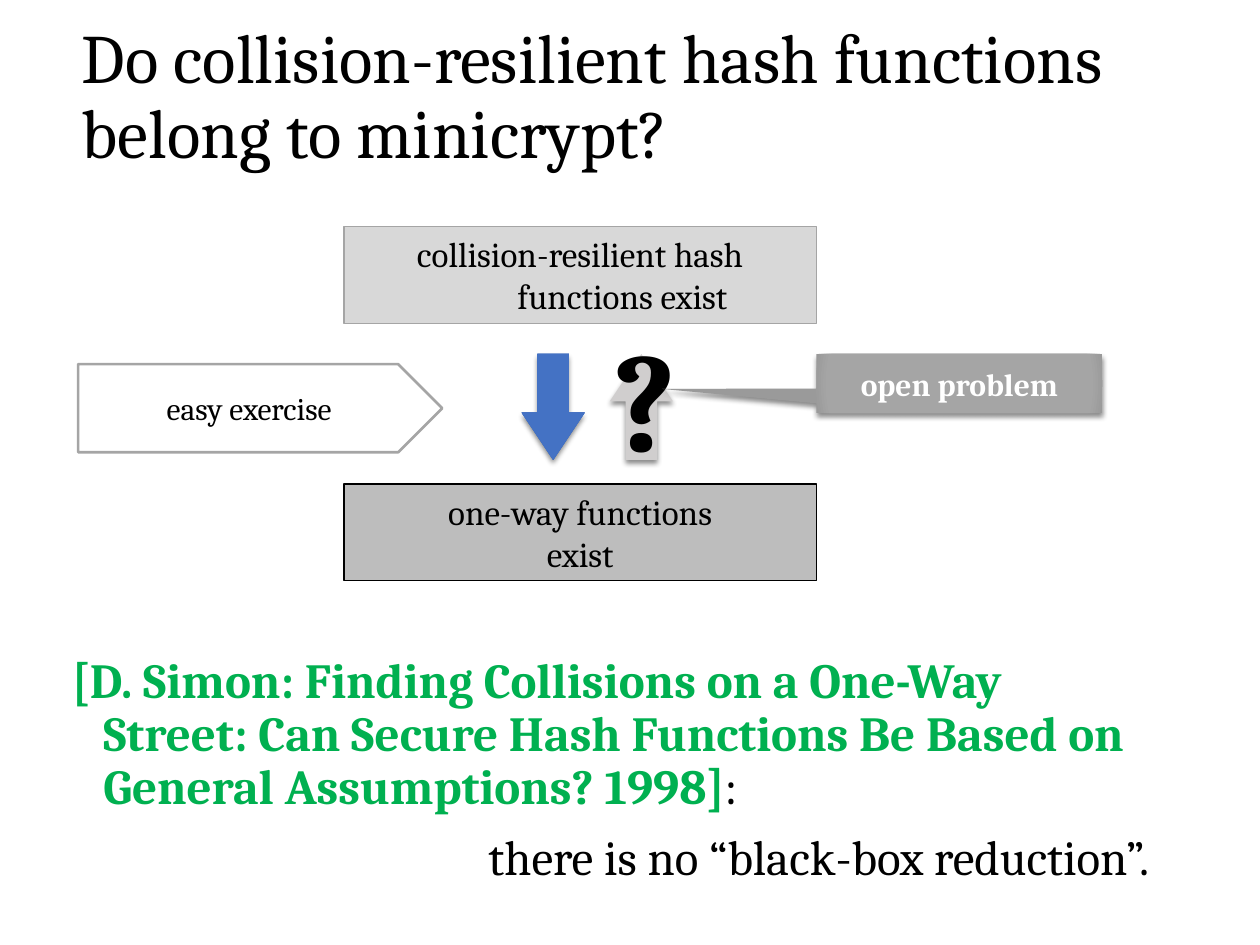
from lxml import etree
from pptx import Presentation
from pptx import util as u
from pptx.dml.color import RGBColor
from pptx.enum import shapes, text
from pptx.oxml import parse_xml
from pptx.oxml.ns import nsdecls, qn

COLORS = {
    "ink": "000000", "paper": "FFFFFF", "citation": "00B050",
    "light": "D8D8D8", "medium": "BDBDBD", "outline": "A5A5A5",
    "proved": "4472C4", "proved_edge": "3F6AB7",
    "unknown": "D0CECE", "open_edge": "9A9A9A",
}
TITLE = "Do collision-resilient hash functions belong to minicrypt?"
CITATION = ("[D. Simon: Finding Collisions on a One-Way Street: "
            "Can Secure Hash Functions Be Based on General Assumptions? 1998]")
CONCLUSION = "there is no “black-box reduction”."

# Statements, top to bottom: lines, fill, outline
STATEMENTS = [
    (["collision-resilient hash functions exist"], "light", "outline"),
    (["one-way functions", "exist"], "medium", "ink"),
]
# Implications, left to right: rotation, fill, edge of the gradient
IMPLICATIONS = [(90, "proved", "proved_edge"), (270, "unknown", None)]

STATEMENT_LEFT, STATEMENT_TOP, STATEMENT_STEP = 2.73, 1.8, 2.04
STATEMENT_SIZE = (3.75, 0.77)
ARROW_LEFT, ARROW_TOP, ARROW_STEP = 3.97, 2.98, 0.7
ARROW_SIZE = (0.84, 0.5)

KINDS = shapes.MSO_SHAPE
ALIGN = text.PP_ALIGN
ANCHOR = text.MSO_ANCHOR


def rgb(name):
    return RGBColor.from_string(COLORS[name])


def place(item, left, top, width, height):
    item.left, item.top = u.Inches(left), u.Inches(top)
    item.width, item.height = u.Inches(width), u.Inches(height)


def write(frame, paragraphs, size, align=ALIGN.LEFT, anchor=ANCHOR.TOP,
          color="ink", bold=False, hanging=0, line=None, before=None):
    """Fill a frame; a paragraph is a string or a list of (text, color, bold)."""
    frame.word_wrap = True
    frame.auto_size = text.MSO_AUTO_SIZE.NONE
    frame.vertical_anchor = anchor
    for index, content in enumerate(paragraphs):
        para = frame.add_paragraph() if index else frame.paragraphs[0]
        para.alignment = align
        para.line_spacing = line
        if before is not None:
            para.space_before = u.Pt(before)
        properties = para._p.get_or_add_pPr()
        properties.set("marL", str(u.Inches(hanging)))
        properties.set("indent", str(-u.Inches(hanging)))
        etree.SubElement(properties, qn("a:buNone"))
        spans = [(content, color, bold)] if isinstance(content, str) else content
        for words, span_color, span_bold in spans:
            span = para.add_run()
            span.text = words
            span.font.name = "Cambria"
            span.font.size = u.Pt(size)
            span.font.bold = span_bold
            span.font.color.rgb = rgb(span_color)


def shade(shape, center, edge):
    """Give the shape a radial gradient that darkens at its edge."""
    stops = "".join(
        f'<a:gs pos="{share * 1000}"><a:srgbClr val="{COLORS[name]}"/></a:gs>'
        for share, name in [(0, center), (90, center), (100, edge)])
    gradient = parse_xml(
        f'<a:gradFill {nsdecls("a")}><a:gsLst>{stops}</a:gsLst><a:path path="circle">'
        '<a:fillToRect l="100000" t="100000" r="100000" b="100000"/></a:path></a:gradFill>')
    shape._element.spPr.find(qn("a:prstGeom")).addnext(gradient)


def cast_shadow(shape):
    effects = shape._element.spPr.find(qn("a:effectLst"))
    effects.append(parse_xml(
        f'<a:outerShdw {nsdecls("a")} blurRad="{u.Pt(3)}" dist="{u.Pt(2)}" '
        'dir="5400000" rotWithShape="0"><a:srgbClr val="000000">'
        '<a:alpha val="45000"/></a:srgbClr></a:outerShdw>'))


def add_figure(page, kind, frame, fill, edge=None, outline=None, weight=0.79,
               raised=False):
    shape = page.shapes.add_shape(kind, *map(u.Inches, frame))
    shape.shadow.inherit = False
    if edge:
        shade(shape, fill, edge)
    else:
        shape.fill.solid()
        shape.fill.fore_color.rgb = rgb(fill)
    if outline:
        shape.line.color.rgb = rgb(outline)
        shape.line.width = u.Pt(weight)
    else:
        shape.line.fill.background()
    if raised:
        cast_shadow(shape)
    return shape


def main():
    deck = Presentation()
    deck.slide_width, deck.slide_height = u.Inches(10), u.Inches(7.5)
    page = deck.slides.add_slide(deck.slide_layouts[1])

    title, body = page.placeholders
    place(title, 0.55, 0.16, 9.22, 1.25)
    write(title.text_frame, [TITLE], 39.6, anchor=ANCHOR.MIDDLE, line=0.9, before=0)
    place(body, 0.47, 5.16, 8.75, 2.19)
    write(body.text_frame,
          [[(CITATION, "citation", True), (":", "ink", False)], CONCLUSION],
          28, hanging=0.25, line=0.9, before=10)
    body.text_frame.paragraphs[-1].alignment = ALIGN.RIGHT

    for row, (lines, fill, outline) in enumerate(STATEMENTS):
        top = STATEMENT_TOP + row * STATEMENT_STEP
        box = add_figure(page, KINDS.RECTANGLE, (STATEMENT_LEFT, top, *STATEMENT_SIZE),
                         fill, outline=outline)
        write(box.text_frame, lines, 20, align=ALIGN.CENTER, hanging=0.67)

    for column, (rotation, fill, edge) in enumerate(IMPLICATIONS):
        left = ARROW_LEFT + column * ARROW_STEP
        arrow = add_figure(page, KINDS.RIGHT_ARROW, (left, ARROW_TOP, *ARROW_SIZE),
                           fill, edge, raised=True)
        arrow.adjustments[1] = 0.75
        arrow.rotation = rotation

    question = page.shapes.add_textbox(*map(u.Inches, (4.69, 2.42, 0.86, 1.45)))
    write(question.text_frame, ["?"], 80, align=ALIGN.CENTER, bold=True)

    callout = add_figure(page, KINDS.RECTANGULAR_CALLOUT, (6.48, 2.81, 2.27, 0.47),
                         "outline", "open_edge", raised=True)
    callout.adjustments[0], callout.adjustments[1] = -1.04, 0.09
    write(callout.text_frame, ["open problem"], 18, align=ALIGN.CENTER,
          anchor=ANCHOR.MIDDLE, color="paper", bold=True)

    exercise = add_figure(page, KINDS.PENTAGON, (0.62, 2.89, 2.89, 0.7),
                          "paper", outline="outline", weight=1.5)
    write(exercise.text_frame, ["easy exercise"], 18, align=ALIGN.CENTER,
          anchor=ANCHOR.MIDDLE)

    deck.save("out.pptx")


if __name__ == "__main__":
    main()
